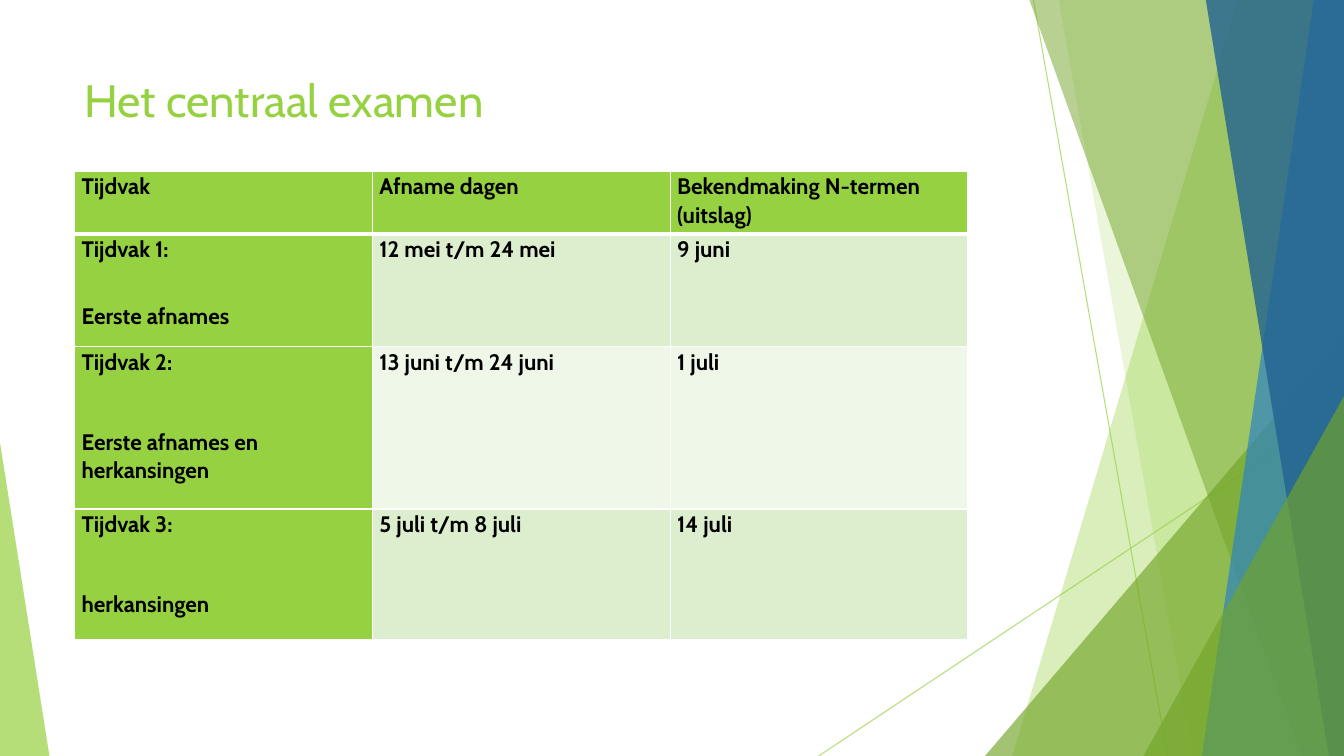
from lxml.etree import SubElement
from pptx import Presentation
from pptx.dml.color import RGBColor
from pptx.enum.shapes import MSO_CONNECTOR, MSO_SHAPE
from pptx.enum.text import MSO_ANCHOR
from pptx.oxml import parse_xml
from pptx.oxml.ns import nsdecls, qn
from pptx.util import Inches, Pt

WIDTH, HEIGHT = 13.33, 7.5
FONT = "Cabin"
LIME, OLIVE, BLUE, NAVY = "96D141", "72A528", "2E83C3", "226292"
WHITE, BLACK = "FFFFFF", "000000"
BANDS = ["DDEECF", "EFF7E9"]

HEADINGS = ["Tijdvak", "Afname dagen", "Bekendmaking N-termen (uitslag)"]
PERIODS = [
    ("Tijdvak 1:\nEerste afnames", "12 mei t/m 24 mei", "9 juni"),
    ("Tijdvak 2:\nEerste afnames en herkansingen", "13 juni t/m 24 juni", "1 juli"),
    ("Tijdvak 3:\nherkansingen", "5 juli t/m 8 juli", "14 juli"),
]
ROW_HEIGHTS = [0.62, 1.12, 1.61, 1.3]
LABEL_GAPS = [0, 19.5, 28.5, 28.5]


def rgb(color):
    """Turn a hex string into a colour."""
    return RGBColor.from_string(color)


def set_opacity(color_format_owner, percent):
    """Make every solid colour below an element partly transparent."""
    for color in color_format_owner.iter(qn("a:srgbClr")):
        SubElement(color, qn("a:alpha"), val=str(percent * 1000))


def paint(shape, color, opacity):
    """Give a facet a translucent fill without outline or shadow."""
    shape.shadow.inherit = False
    shape.line.fill.background()
    shape.fill.solid()
    shape.fill.fore_color.rgb = rgb(color)
    set_opacity(shape.fill._xPr, opacity)


def add_ray(slide, start, end):
    """Draw one thin decorative line."""
    ray = slide.shapes.add_connector(
        MSO_CONNECTOR.STRAIGHT, *[Inches(v) for v in (*start, *end)])
    ray.line.color.rgb = rgb(LIME)
    ray.line.width = Pt(0.75)
    properties = ray._element.spPr
    set_opacity(properties, 70)
    SubElement(properties, qn("a:effectLst"))


def add_band(slide, top_x, bottom_x, right, bottom, color, opacity):
    """Draw a full-height facet with a slanted left edge."""
    builder = slide.shapes.build_freeform(Inches(top_x), 0)
    corners = [(right, 0), (right, bottom), (bottom_x, bottom)]
    builder.add_line_segments([(Inches(x), Inches(y)) for x, y in corners])
    paint(builder.convert_to_shape(), color, opacity)


def add_corner(slide, left, top, right, bottom, apex, color, opacity):
    """Draw a right-angled triangle standing on the bottom edge."""
    corner = slide.shapes.add_shape(
        MSO_SHAPE.ISOSCELES_TRIANGLE, Inches(left), Inches(top),
        Inches(right - left), Inches(bottom - top))
    corner.adjustments[0] = apex
    paint(corner, color, opacity)


def add_facets(slide, right, bottom):
    """Place the facets along the right and left edges of the slide."""
    add_ray(slide, (right - 3.08, 0), (right - 1.75, bottom))
    add_ray(slide, (right, bottom - 3.47), (right - 5.21, bottom))
    for top_x, bottom_x, color, opacity in [(1.05, 3.29, LIME, 36), (2.83, 1.5, LIME, 20)]:
        add_band(slide, right - top_x, right - bottom_x, right, bottom, color, opacity)
    add_corner(slide, right - 3.56, bottom - 4.17, right, bottom, 1, OLIVE, 66)
    for top_x, bottom_x, color, opacity in [
            (3.12, 0.42, OLIVE, 50), (0.3, 1.41, BLUE, 70), (1.37, 0.15, NAVY, 80)]:
        add_band(slide, right - top_x, right - bottom_x, right, bottom, color, opacity)
    add_corner(slide, right - 1.99, bottom - 3.57, right, bottom, 1, OLIVE, 66)
    add_corner(slide, 0, bottom - 3.11, 0.49, bottom, 0, LIME, 70)


def add_title(slide, left, top, width, height):
    """Write the slide title."""
    title = slide.shapes.add_textbox(*[Inches(v) for v in (left, top, width, height)])
    frame = title.text_frame
    frame.word_wrap = True
    frame.vertical_anchor = MSO_ANCHOR.TOP
    frame.text = "Het centraal examen"
    font = frame.paragraphs[0].runs[0].font
    font.name, font.size, font.color.rgb = FONT, Pt(32.4), rgb(LIME)


def set_borders(cell, top, bottom):
    """Draw white cell borders with the given top and bottom widths."""
    sides = [("lnL", 1), ("lnR", 1), ("lnT", top), ("lnB", bottom)]
    for index, (side, width) in enumerate(sides):
        cell._tc.get_or_add_tcPr().insert(index, parse_xml(
            f'<a:{side} {nsdecls("a")} w="{Pt(width)}"><a:solidFill>'
            f'<a:srgbClr val="{WHITE}"/></a:solidFill></a:{side}>'))


def fill_cell(cell, text, color, gap):
    """Write and format one cell, with a gap before its second paragraph."""
    cell.margin_left = cell.margin_right = Inches(0.07)
    cell.margin_top = cell.margin_bottom = 0
    cell.fill.solid()
    cell.fill.fore_color.rgb = rgb(color)
    cell.text_frame.text = text
    for index, paragraph in enumerate(cell.text_frame.paragraphs):
        paragraph.line_spacing = 1.07
        paragraph.space_before = Pt(gap * index)
        paragraph.space_after = Pt(8)
        font = paragraph.runs[0].font
        font.name, font.size, font.bold = FONT, Pt(16), True
        font.color.rgb = rgb(BLACK)


def add_schedule(slide, left, top, width):
    """Place the table of exam periods."""
    rows = [HEADINGS, *PERIODS]
    schedule = slide.shapes.add_table(
        len(rows), len(HEADINGS), Inches(left), Inches(top),
        Inches(width), Inches(sum(ROW_HEIGHTS))).table
    for column in schedule.columns:
        column.width = Inches(width / len(HEADINGS))
    for r, texts in enumerate(rows):
        schedule.rows[r].height = Inches(ROW_HEIGHTS[r])
        for c, text in enumerate(texts):
            cell = schedule.cell(r, c)
            color = LIME if r == 0 or c == 0 else BANDS[(r - 1) % 2]
            fill_cell(cell, text, color, LABEL_GAPS[r])
            set_borders(cell, 3 if r == 1 else 1, 3 if r == 0 else 1)


def main():
    """Build and save the slide."""
    deck = Presentation()
    deck.slide_width, deck.slide_height = Inches(WIDTH), Inches(HEIGHT)
    slide = deck.slides.add_slide(deck.slide_layouts[6])
    add_facets(slide, WIDTH, HEIGHT)
    add_title(slide, 0.74, 0.67, 9.4, 1.44)
    add_schedule(slide, 0.74, 1.7, 8.86)
    deck.save("out.pptx")


if __name__ == "__main__":
    main()
